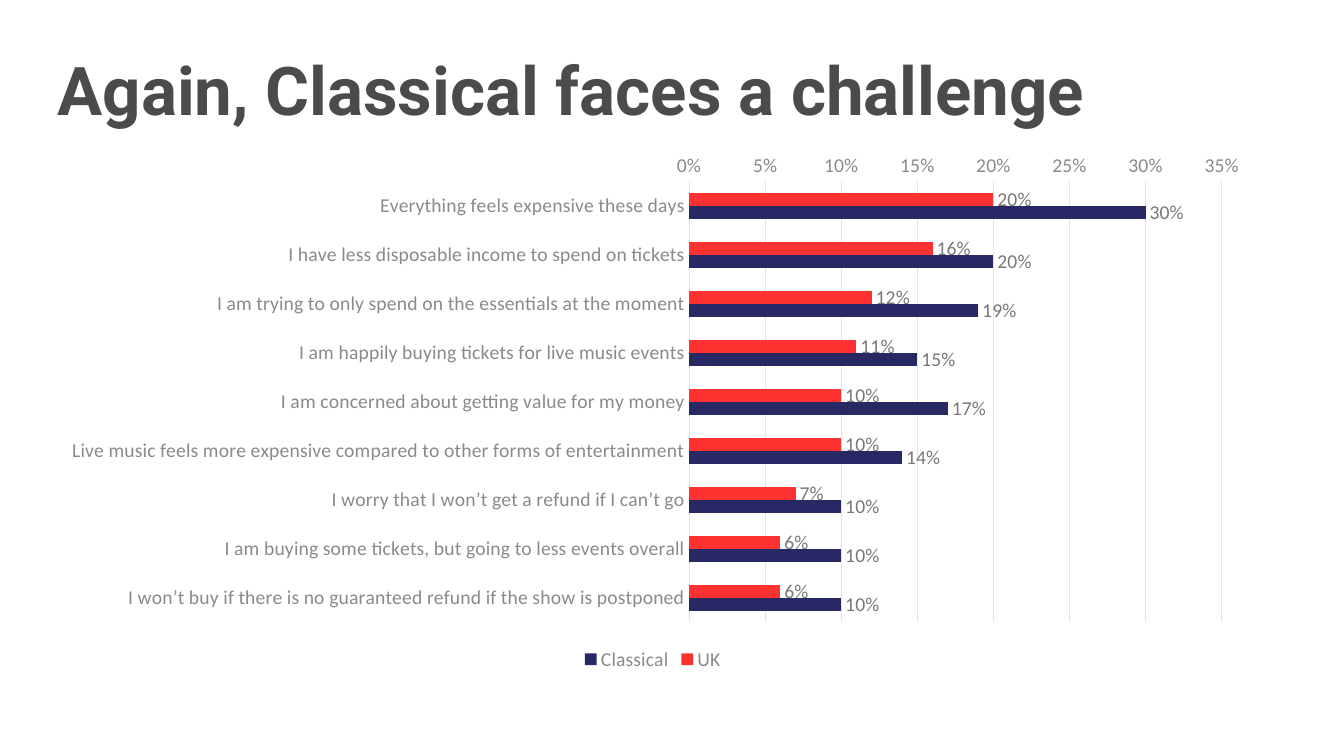
from lxml import etree
from pptx import Presentation
from pptx.chart.data import CategoryChartData
from pptx.dml.color import RGBColor
from pptx.enum.chart import XL_CHART_TYPE, XL_LABEL_POSITION, XL_LEGEND_POSITION, XL_TICK_MARK
from pptx.oxml.ns import qn
from pptx.util import Pt

BAR_CLUSTERED = XL_CHART_TYPE.BAR_CLUSTERED
OUTSIDE_END = XL_LABEL_POSITION.OUTSIDE_END
LEGEND_BOTTOM = XL_LEGEND_POSITION.BOTTOM
NO_TICK = XL_TICK_MARK.NONE

DARK_GREY, AXIS_GREY, LABEL_GREY, LINE_GREY = "4B4B4B", "8A8A8A", "787878", "E4E4E4"
SERIES_COLORS = {"UK": "FF3232", "Classical": "282864"}

# Statement, UK share, Classical share
ATTITUDES = [
    ("Everything feels expensive these days", 0.20, 0.30),
    ("I have less disposable income to spend on tickets", 0.16, 0.20),
    ("I am trying to only spend on the essentials at the moment", 0.12, 0.19),
    ("I am happily buying tickets for live music events", 0.11, 0.15),
    ("I am concerned about getting value for my money", 0.10, 0.17),
    ("Live music feels more expensive compared to other forms of entertainment", 0.10, 0.14),
    ("I worry that I won’t get a refund if I can’t go", 0.07, 0.10),
    ("I am buying some tickets, but going to less events overall", 0.06, 0.10),
    ("I won’t buy if there is no guaranteed refund if the show is postponed", 0.06, 0.10),
]


def color(hex_string):
    return RGBColor.from_string(hex_string)


def format_font(font, size=14, name="Calibri", fill=AXIS_GREY, bold=False):
    font.size = Pt(size)
    font.name = name
    font.bold = bold
    font.color.rgb = color(fill)


def format_line(line, fill=LINE_GREY, width=0.75):
    line.color.rgb = color(fill)
    line.width = Pt(width)


def add_text(slide, text, left, top, width, height, **font_format):
    frame = slide.shapes.add_textbox(Pt(left), Pt(top), Pt(width), Pt(height)).text_frame
    frame.word_wrap = True
    run = frame.paragraphs[0].add_run()
    run.text = text
    format_font(run.font, **font_format)


def set_plot_layout(chart, **fractions):
    """Fix the inner plot area as fractions of the chart box."""
    plot_area = chart._chartSpace.chart.plotArea
    for layout in plot_area.findall(qn("c:layout")):
        plot_area.remove(layout)
    layout = etree.Element(qn("c:layout"))
    manual = etree.SubElement(layout, qn("c:manualLayout"))
    settings = {"layoutTarget": "inner", "xMode": "edge", "yMode": "edge", **fractions}
    for tag, value in settings.items():
        etree.SubElement(manual, qn(f"c:{tag}")).set("val", str(value))
    plot_area.insert(0, layout)


def add_attitude_chart(slide, left, top, width, height):
    statements, uk_shares, classical_shares = zip(*ATTITUDES)
    data = CategoryChartData(number_format="0%")
    data.categories = statements
    data.add_series("UK", uk_shares)
    data.add_series("Classical", classical_shares)
    chart = slide.shapes.add_chart(
        BAR_CLUSTERED, Pt(left), Pt(top), Pt(width), Pt(height), data).chart
    chart.has_title = False
    format_font(chart.font, fill=DARK_GREY)
    set_plot_layout(chart, x=0.53, y=0.07, w=0.44, h=0.83)

    # Bars and their labels
    plot = chart.plots[0]
    plot.gap_width = 182
    plot.overlap = 0
    plot.vary_by_categories = False
    for series in plot.series:
        series.format.fill.solid()
        series.format.fill.fore_color.rgb = color(SERIES_COLORS[series.name])
        series.invert_if_negative = False
        labels = series.data_labels
        labels.show_value = True
        labels.position = OUTSIDE_END
        labels.number_format = "0%"
        labels.number_format_is_linked = False
        format_font(labels.font, fill=LABEL_GREY)

    # Axes
    for axis in (chart.category_axis, chart.value_axis):
        axis.major_tick_mark = NO_TICK
        axis.minor_tick_mark = NO_TICK
        format_font(axis.tick_labels.font)
    chart.category_axis.reverse_order = True
    format_line(chart.category_axis.format.line)
    shares = chart.value_axis
    shares.minimum_scale, shares.maximum_scale, shares.major_unit = 0, 0.35, 0.05
    shares.tick_labels.number_format = "0%"
    shares.tick_labels.number_format_is_linked = False
    shares.format.line.fill.background()
    format_line(shares.major_gridlines.format.line)

    # Legend
    chart.has_legend = True
    chart.legend.position = LEGEND_BOTTOM
    chart.legend.include_in_layout = False
    format_font(chart.legend.font)


def build_chart_slide(presentation):
    slide = presentation.slides.add_slide(presentation.slide_layouts[6])
    add_text(slide, "Again, Classical faces a challenge", 34, 31, 912, 65.5,
             size=48, name="Roboto", fill=DARK_GREY, bold=True)
    add_attitude_chart(slide, 34, 103, 864.7, 379.5)


def main():
    presentation = Presentation()
    presentation.slide_width = Pt(960)
    presentation.slide_height = Pt(540)
    build_chart_slide(presentation)
    presentation.save("out.pptx")


if __name__ == "__main__":
    main()
